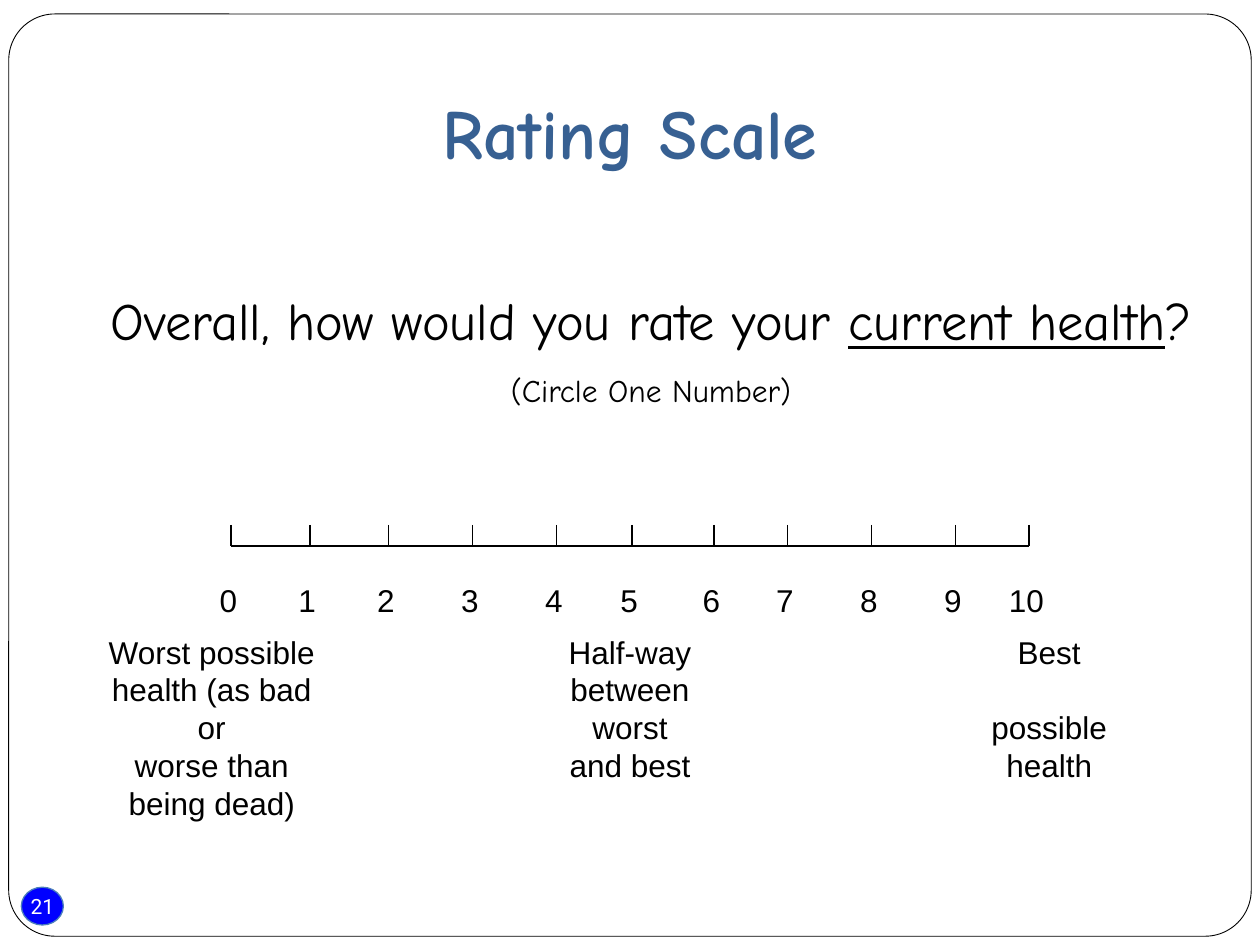
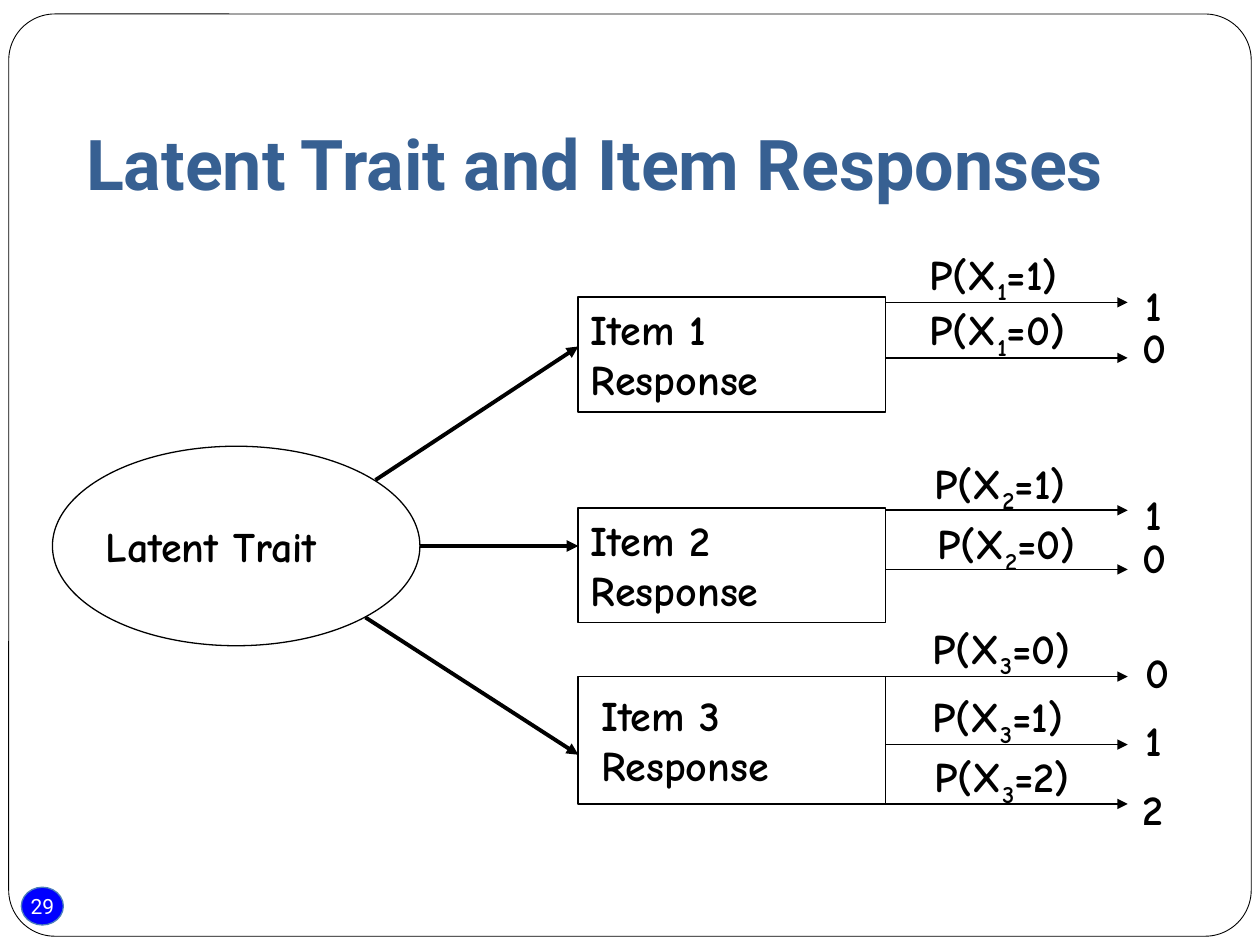
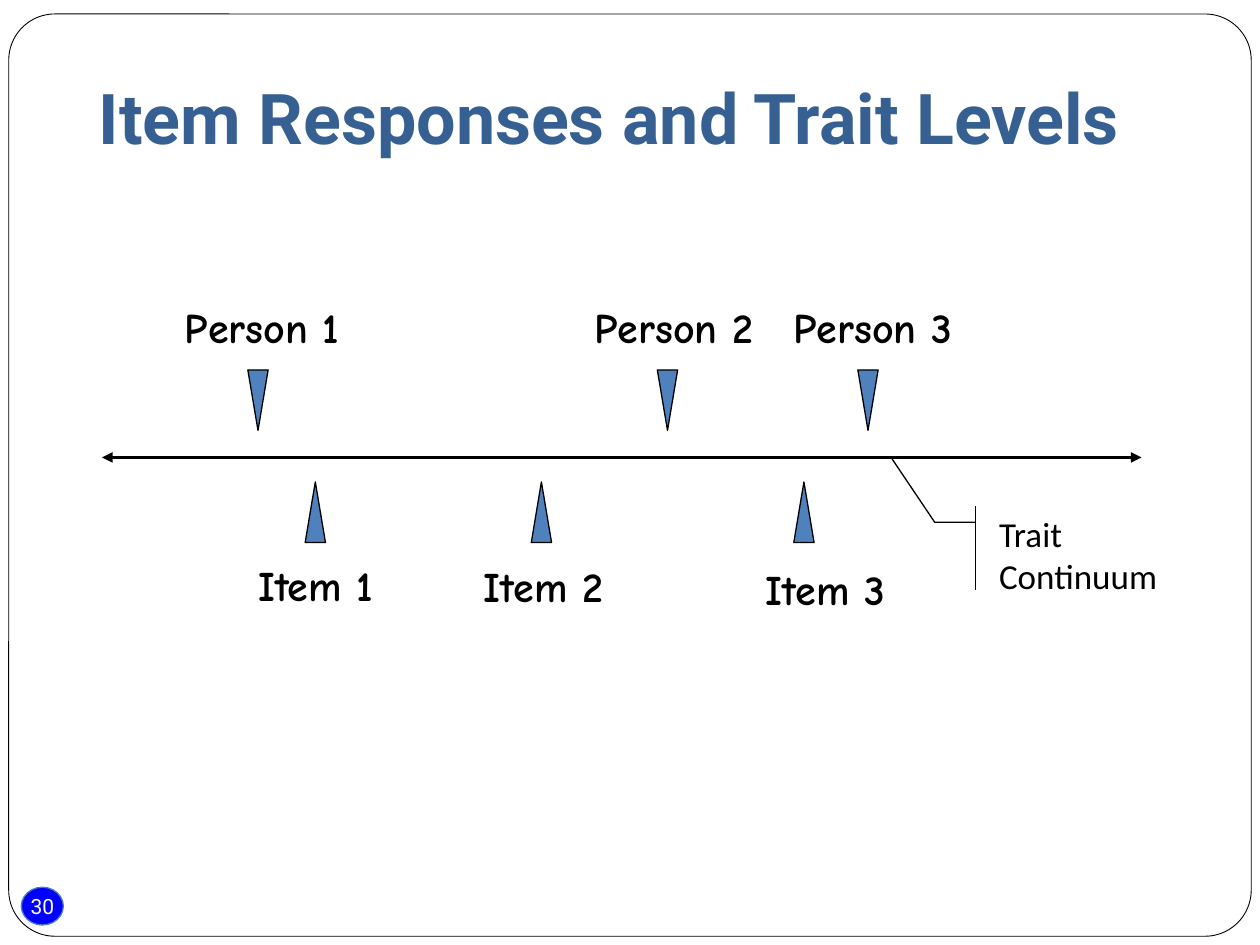
from lxml.etree import SubElement
from pptx import Presentation
from pptx.dml.color import RGBColor
from pptx.enum.shapes import MSO_CONNECTOR, MSO_SHAPE
from pptx.enum.text import MSO_ANCHOR, MSO_AUTO_SIZE, PP_ALIGN
from pptx.oxml.ns import qn
from pptx.util import Pt

BLACK, WHITE, TITLE_BLUE = "000000", "FFFFFF", "376092"
BADGE_BLUE, BADGE_LINE, MARKER_BLUE = "0000FF", "4B7EBC", "4F81BD"
HAND, SANS = "Comic Neue", "Roboto"
LEFT, CENTER = PP_ALIGN.LEFT, PP_ALIGN.CENTER
rgb = RGBColor.from_string


def write(sp, *paragraphs, size=24, font=HAND, color=BLACK, bold=False,
          align=LEFT, anchor=MSO_ANCHOR.TOP, margins=(7.2, 3.6), accent=None):
    """Fill a shape with text; in a paragraph given as runs, every second run takes the accent."""
    tf = sp.text_frame
    tf.word_wrap = True
    tf.auto_size = MSO_AUTO_SIZE.NONE
    tf.vertical_anchor = anchor
    tf.margin_left, tf.margin_top = map(Pt, margins)
    for i, runs in enumerate(paragraphs):
        p = tf.paragraphs[0] if i == 0 else tf.add_paragraph()
        p.alignment = align
        for j, text in enumerate([runs] if isinstance(runs, str) else runs):
            r = p.add_run()
            r.text = text
            r.font.size, r.font.name, r.font.bold = Pt(size), font, bold
            r.font.color.rgb = rgb(color)
            if j % 2 and accent == "underline":
                r.font.underline = True
            elif j % 2 and accent == "subscript":
                r._r.get_or_add_rPr().set("baseline", "-25000")
    return tf


def add_shape(s, kind, box, fill=None, line=BLACK, width=0.75, adjustments=()):
    sp = s.shapes.add_shape(kind, *map(Pt, box))
    sp.shadow.inherit = False
    if fill:
        sp.fill.solid()
        sp.fill.fore_color.rgb = rgb(fill)
    else:
        sp.fill.background()
    sp.line.color.rgb = rgb(line)
    sp.line.width = Pt(width)
    for i, value in enumerate(adjustments):
        sp.adjustments[i] = value
    return sp


prs = Presentation()
prs.slide_width, prs.slide_height = Pt(720), Pt(540)
layout = prs.slide_layouts.get_by_name("Title Only")

# Titles and page numbers
slides = []
for number, title, font, box, align in [
    ("21", "Rating Scale", HAND, (54, 30, 612, 90), CENTER),
    ("29", "Latent Trait and Item Responses", SANS, (42, 48, 678, 90), LEFT),
    ("30", "Item Responses and Trait Levels", SANS, (12, 21.6, 672, 90), CENTER),
]:
    s = prs.slides.add_slide(layout)
    sp = s.shapes.title
    sp.left, sp.top, sp.width, sp.height = map(Pt, box)
    write(sp, title, size=40, font=font, color=TITLE_BLUE, bold=True,
          align=align, anchor=MSO_ANCHOR.MIDDLE)
    badge = add_shape(s, MSO_SHAPE.OVAL, (12.2, 507, 24, 21.6), BADGE_BLUE, BADGE_LINE)
    tf = write(badge, number, size=12, font=SANS, color=WHITE, align=CENTER,
               anchor=MSO_ANCHOR.MIDDLE, margins=(0, 0))
    tf.margin_right = tf.margin_bottom = 0
    slides.append(s)
rating, latent, levels = slides

# The rounded frame belongs to the layout, so every slide shows it
frame = add_shape(rating, MSO_SHAPE.ROUNDED_RECTANGLE, (5, 8, 710, 527),
                  width=0.5, adjustments=[0.05])
layout.shapes.element.append(frame.element)

lines = []  # slide, x1, y1, x2, y2, width, arrowheads

# Rating scale
sp = rating.shapes.add_textbox(*map(Pt, (20, 161.3, 704, 83)))
tf = write(sp, ("Overall, how would you rate your ", "current health", "?"),
           "(Circle One Number)", size=30, align=CENTER, accent="underline")
hint = tf.paragraphs[1]
hint.space_before = Pt(11)
hint.runs[0].font.size = Pt(18)

ticks = [132, 177, 222, 270, 318, 361, 408, 450, 498, 546, 588]
lines.append((rating, ticks[0], 312, ticks[-1], 312, 1, ()))
for x in ticks:
    lines.append((rating, x, 300, x, 312, 1, ()))

scale_left = 93.6
sp = rating.shapes.add_textbox(*map(Pt, (scale_left, 328.3, 520, 29)))
tf = write(sp, "".join(f"\t{n}" for n in range(len(ticks))), size=18, font="Arial",
           margins=(0, 3.6))
tabs = SubElement(tf.paragraphs[0]._p.get_or_add_pPr(), qn("a:tabLst"))
for x in ticks:
    SubElement(tabs, qn("a:tab"), pos=str(Pt(x - 1.5 - scale_left)), algn="ctr")

for x, width, *words in [
    (52.5, 137, "Worst possible", "health (as bad or", "worse than", "being dead)"),
    (300, 120, "Half-way", "between worst", "and best"),
    (549, 101, "Best", "possible", "health"),
]:
    sp = rating.shapes.add_textbox(*map(Pt, (x, 358, width, 94)))
    tf = write(sp, *words, size=18, font="Arial", align=CENTER)
tf.paragraphs[1].space_before = Pt(21.6)

# Latent trait and item responses
add_shape(latent, MSO_SHAPE.OVAL, (30, 255, 210, 114))
sp = latent.shapes.add_textbox(*map(Pt, (53.3, 293.8, 161, 37)))
write(sp, "Latent Trait", bold=True)

item_left, item_right, arrow_end = 330.5, 506, 644.4
# item top, height, margins, then per outcome: value, label x, label y, arrow y, value x, value y
items = [
    (169.9, 65.5, (7.2, 3.6), [("1", 524, 138.2, 172.8, 647.3, 156.2),
                               ("0", 524, 169.9, 204.5, 645.8, 180)]),
    (290.2, 65.5, (7.2, 3.6), [("1", 527, 257.8, 291.6, 647.3, 275.8),
                               ("0", 528.5, 292.3, 325.4, 645.8, 300.2)]),
    (386.6, 72.8, (13, 7.2), [("0", 525.6, 352, 386.6, 647.3, 365.8),
                              ("1", 525.6, 391, 425.5, 647.3, 404.6),
                              ("2", 527, 425.5, 459.4, 645.8, 444.2)]),
]
for n, (top, height, margins, outcomes) in enumerate(items, 1):
    sp = add_shape(latent, MSO_SHAPE.RECTANGLE,
                   (item_left, top, item_right - item_left, height), width=1)
    write(sp, f"Item {n} Response", bold=True, margins=margins)
    for value, label_x, label_y, arrow_y, value_x, value_y in outcomes:
        sp = latent.shapes.add_textbox(*map(Pt, (label_x, label_y, 108, 37)))
        write(sp, ("P(X", str(n), f"={value})"), bold=True, accent="subscript")
        sp = latent.shapes.add_textbox(*map(Pt, (value_x, value_y, 30, 37)))
        write(sp, value, bold=True)
        lines.append((latent, item_right, arrow_y, arrow_end, arrow_y, 1, ("tailEnd",)))

for x, y, end_y in [(214.6, 274.3, 198), (240, 312, 312), (208.8, 352.8, 431.3)]:
    lines.append((latent, x, y, item_left, end_y, 2.25, ("tailEnd",)))

# Item responses and trait levels
lines.append((levels, 58.3, 261.4, 652.3, 261.4, 2, ("headEnd", "tailEnd")))
# name, marker top, rotation, then marker x, label x, label y
for name, top, rotation, marks in [
    ("Person", 211.4, 180, [(141.6, 98.6, 168.5), (375.6, 332.6, 168.5), (490.2, 446.4, 168.5)]),
    ("Item", 275.4, 0, [(174.4, 140.4, 316), (303.6, 269.3, 316.8), (453.6, 430.6, 318.2)]),
]:
    for n, (x, label_x, label_y) in enumerate(marks, 1):
        sp = add_shape(levels, MSO_SHAPE.ISOSCELES_TRIANGLE, (x, top, 11.6, 34.6), MARKER_BLUE)
        sp.rotation = rotation
        sp = levels.shapes.add_textbox(*map(Pt, (label_x, label_y, 115, 37)))
        write(sp, f"{name} {n}", bold=True)

callout = add_shape(levels, MSO_SHAPE.LINE_CALLOUT_2_ACCENT_BAR, (563.8, 289.4, 129, 48),
                    adjustments=[0.19, -0.05, 0.19, -0.23, -0.57, -0.42])
write(callout, "Trait", "Continuum", size=20, font="Calibri")

# Lines and arrows of all slides
for s, x1, y1, x2, y2, width, heads in lines:
    c = s.shapes.add_connector(MSO_CONNECTOR.STRAIGHT, *map(Pt, (x1, y1, x2, y2)))
    c.line.color.rgb = rgb(BLACK)
    c.line.width = Pt(width)
    for head in heads:
        SubElement(c.element.spPr.find(qn("a:ln")), qn(f"a:{head}"), type="triangle")
    SubElement(c.element.spPr, qn("a:effectLst"))

prs.save("out.pptx")
